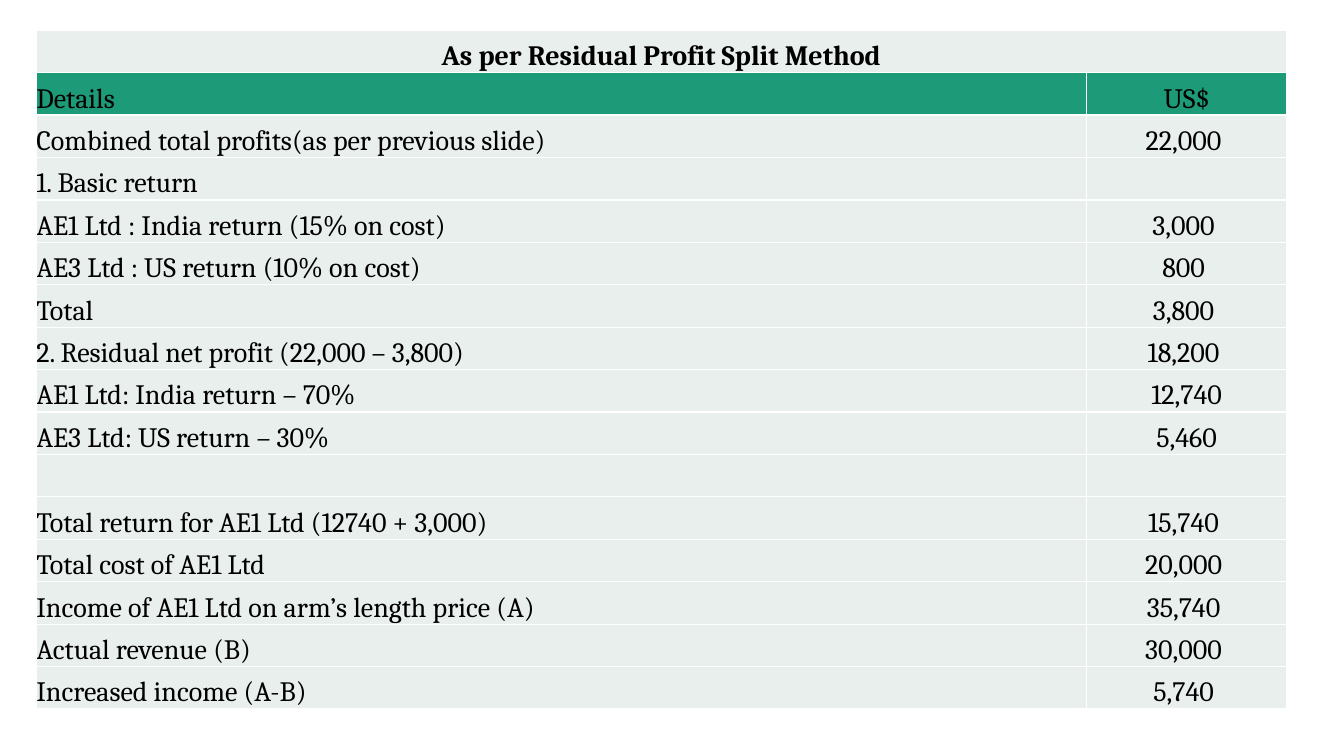
"""Build the residual profit split table slide."""
from pptx import Presentation
from pptx.dml.color import RGBColor
from pptx.enum.text import MSO_ANCHOR, PP_ALIGN
from pptx.oxml import parse_xml
from pptx.oxml.ns import nsdecls
from pptx.util import Inches, Pt

COLORS = {"header": "1D9A78", "body": "E8EFEC", "border": "FFFFFF", "text": "000000"}
TABLE_HEIGHT = 6.74
ROWS = [
    ("As per Residual Profit Split Method", ""),
    ("Details", "US$"),
    ("Combined total profits(as per previous slide)", "22,000 "),
    ("1. Basic return", ""),
    ("AE1 Ltd : India return (15% on cost)", "3,000 "),
    ("AE3 Ltd : US return (10% on cost)", "800 "),
    ("Total", "3,800 "),
    ("2. Residual net profit (22,000 – 3,800)", "18,200 "),
    ("AE1 Ltd: India return – 70%", "12,740"),
    ("AE3 Ltd: US return – 30%", "5,460"),
    ("", ""),
    ("Total return for AE1 Ltd (12740 + 3,000)", "15,740 "),
    ("Total cost of AE1 Ltd", "20,000 "),
    ("Income of AE1 Ltd on arm’s length price (A)", "35,740 "),
    ("Actual revenue (B)", "30,000 "),
    ("Increased income (A-B)", "5,740 "),
]


def add_borders(cell):
    properties = cell._tc.get_or_add_tcPr()
    for side in ("lnL", "lnR", "lnT", "lnB"):
        properties.append(parse_xml(
            f'<a:{side} {nsdecls("a")} w="{Pt(1)}"><a:solidFill>'
            f'<a:srgbClr val="{COLORS["border"]}"/></a:solidFill></a:{side}>'))


presentation = Presentation()
presentation.slide_width = Inches(13.33)
presentation.slide_height = Inches(7.5)
slide = presentation.slides.add_slide(presentation.slide_layouts[6])

table = slide.shapes.add_table(
    len(ROWS), 2, Inches(0.36), Inches(0.3), Inches(12.4), Inches(TABLE_HEIGHT)).table
table.columns[0].width = Inches(10.42)
table.columns[1].width = Inches(1.98)
table.cell(0, 0).merge(table.cell(0, 1))

for row_index, texts in enumerate(ROWS):
    table.rows[row_index].height = Inches(TABLE_HEIGHT / len(ROWS))
    for column_index, text in enumerate(texts):
        cell = table.cell(row_index, column_index)
        cell.margin_left = cell.margin_right = cell.margin_top = cell.margin_bottom = 0
        cell.vertical_anchor = MSO_ANCHOR.BOTTOM
        add_borders(cell)
        cell.fill.solid()
        cell.fill.fore_color.rgb = RGBColor.from_string(
            COLORS["header" if row_index == 1 else "body"])
        if not text:
            continue
        paragraph = cell.text_frame.paragraphs[0]
        centered = row_index == 0 or column_index == 1
        paragraph.alignment = PP_ALIGN.CENTER if centered else PP_ALIGN.LEFT
        run = paragraph.add_run()
        run.text = text
        run.font.name = "Cambria"
        run.font.size = Pt(20)
        run.font.bold = row_index == 0
        run.font.color.rgb = RGBColor.from_string(COLORS["text"])

presentation.save("out.pptx")
